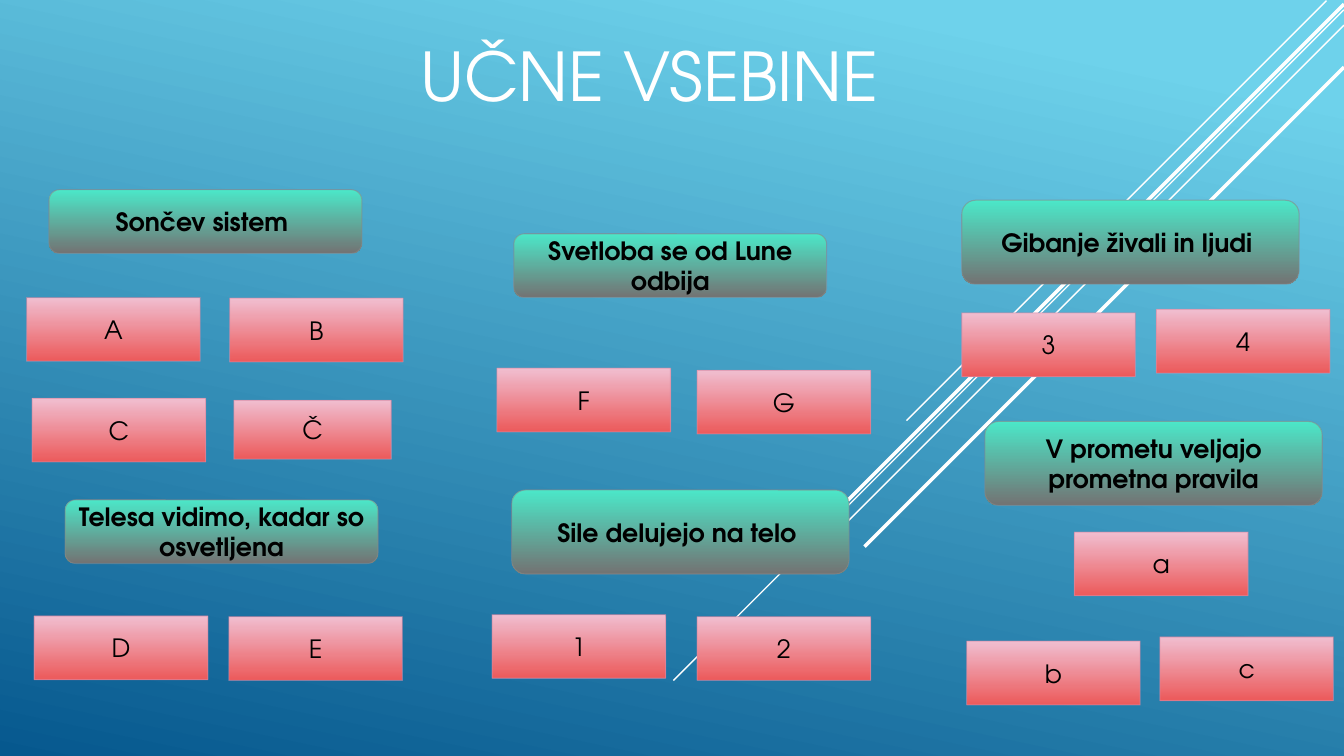
import pptx
import pptx.util
import pptx.dml.color
import pptx.enum.shapes
import pptx.enum.text
import pptx.oxml
import pptx.oxml.ns

Pt = pptx.util.Pt
SHAPE = pptx.enum.shapes.MSO_SHAPE
ALIGN = pptx.enum.text.PP_ALIGN
ANCHOR = pptx.enum.text.MSO_ANCHOR

FONT = "TeX Gyre Adventor"
HUES = {
    "white": "FFFFFF", "black": "000000",
    "sky": "6ED2EB", "sea": "06588E",
    "mint": "4BE7C8", "gray": "737373", "rim": "898989",
    "pink": "F0BED0", "red": "EC5A5B", "rose": "D68BA6",
}
TITLE = "UČNE VSEBINE "
RAYS = [
    (947.5, 0.5, 300, 1), (960, 7, 479, 1), (960, 18, 390.5, 1),
    (960, 3, 382, 2.5), (960, 48, 342.5, 2.5),
]
TILE = (124, 45.5)
SMALL = (112.5, 42)
BAR = (223.5, 45.5)
WIDE = (241, 60)
TILES = [
    ("A", 19, 212.5, TILE), ("B", 164, 213, TILE),
    ("C", 23, 284.5, TILE), ("Č", 167, 286, SMALL),
    ("D", 24.5, 440, TILE), ("E", 163.5, 440.5, TILE),
    ("F", 355, 263, TILE), ("G", 498, 264.5, TILE),
    ("1", 351.5, 439, TILE), ("2", 498, 440.5, TILE),
    ("3", 687, 223.5, TILE), ("4", 826, 221, TILE),
    ("a", 767.5, 380, TILE), ("b", 690.5, 458, TILE),
    ("c", 828.5, 455, TILE),
]
HEADS = [
    ("Sončev sistem ", 35, 135.5, BAR),
    ("Telesa vidimo, kadar so osvetljena", 46.5, 357, BAR),
    ("Svetloba se od Lune odbija", 367, 167, BAR),
    ("Sile delujejo na telo ", 365.5, 350, WIDE),
    ("Gibanje živali in ljudi ", 687, 143, WIDE),
    ("V prometu veljajo prometna pravila", 703.5, 301, WIDE),
]


def hue(name):
    return pptx.dml.color.RGBColor.from_string(HUES[name])


def blend(fill, first, last, angle=270, start=0):
    fill.gradient()
    fill.gradient_angle = angle
    for stop, name, place in zip(fill.gradient_stops, (first, last), (start, 1)):
        stop.color.rgb = hue(name)
        stop.position = place


def write(shape, text, size=18, color="black", bold=False, anchor=ANCHOR.MIDDLE):
    frame = shape.text_frame
    frame.word_wrap = True
    frame.auto_size = pptx.enum.text.MSO_AUTO_SIZE.NONE
    frame.vertical_anchor = anchor
    para = frame.paragraphs[0]
    para.alignment = ALIGN.CENTER
    run = para.add_run()
    run.text = text
    run.font.name = FONT
    run.font.size = Pt(size)
    run.font.bold = bold
    run.font.color.rgb = hue(color)


def add_box(slide, kind, item, fill, edge, bold):
    text, left, top, (width, height) = item
    box = slide.shapes.add_shape(kind, Pt(left), Pt(top), Pt(width), Pt(height))
    box.shadow.inherit = False
    blend(box.fill, *fill)
    box.line.width = Pt(0.75)
    box.line.color.rgb = hue(edge)
    tint = box.line._ln.find(".//" + pptx.oxml.ns.qn("a:srgbClr"))
    tint.append(pptx.oxml.parse_xml(
        f'<a:alpha {pptx.oxml.ns.nsdecls("a")} val="60000"/>'))
    box.text_frame.margin_left = box.text_frame.margin_right = Pt(6)
    write(box, text, bold=bold)


def add_ray(slide, right, top, span, weight):
    ray = slide.shapes.add_connector(
        pptx.enum.shapes.MSO_CONNECTOR.STRAIGHT,
        Pt(right), Pt(top), Pt(right - span), Pt(top + span))
    ray.line.color.rgb = hue("white")
    ray.line.width = Pt(weight)
    ray._element.spPr.append(pptx.oxml.parse_xml(
        f'<a:effectLst {pptx.oxml.ns.nsdecls("a")}/>'))


def main():
    deck = pptx.Presentation()
    deck.slide_width, deck.slide_height = Pt(960), Pt(540)
    slide = deck.slides.add_slide(deck.slide_layouts[5])
    blend(slide.background.fill, "sky", "sea", angle=258, start=0.1)
    for ray in RAYS:
        add_ray(slide, *ray)
    title = slide.shapes.title
    title.left, title.top = Pt(62.5), Pt(13.5)
    title.width, title.height = Pt(816), Pt(72.5)
    write(title, TITLE, size=48, color="white", anchor=ANCHOR.BOTTOM)
    for item in TILES:
        add_box(slide, SHAPE.RECTANGLE, item, ("pink", "red"), "rose", False)
    for item in HEADS:
        add_box(slide, SHAPE.ROUNDED_RECTANGLE, item, ("mint", "gray"), "rim", True)
    deck.save("out.pptx")


if __name__ == "__main__":
    main()
